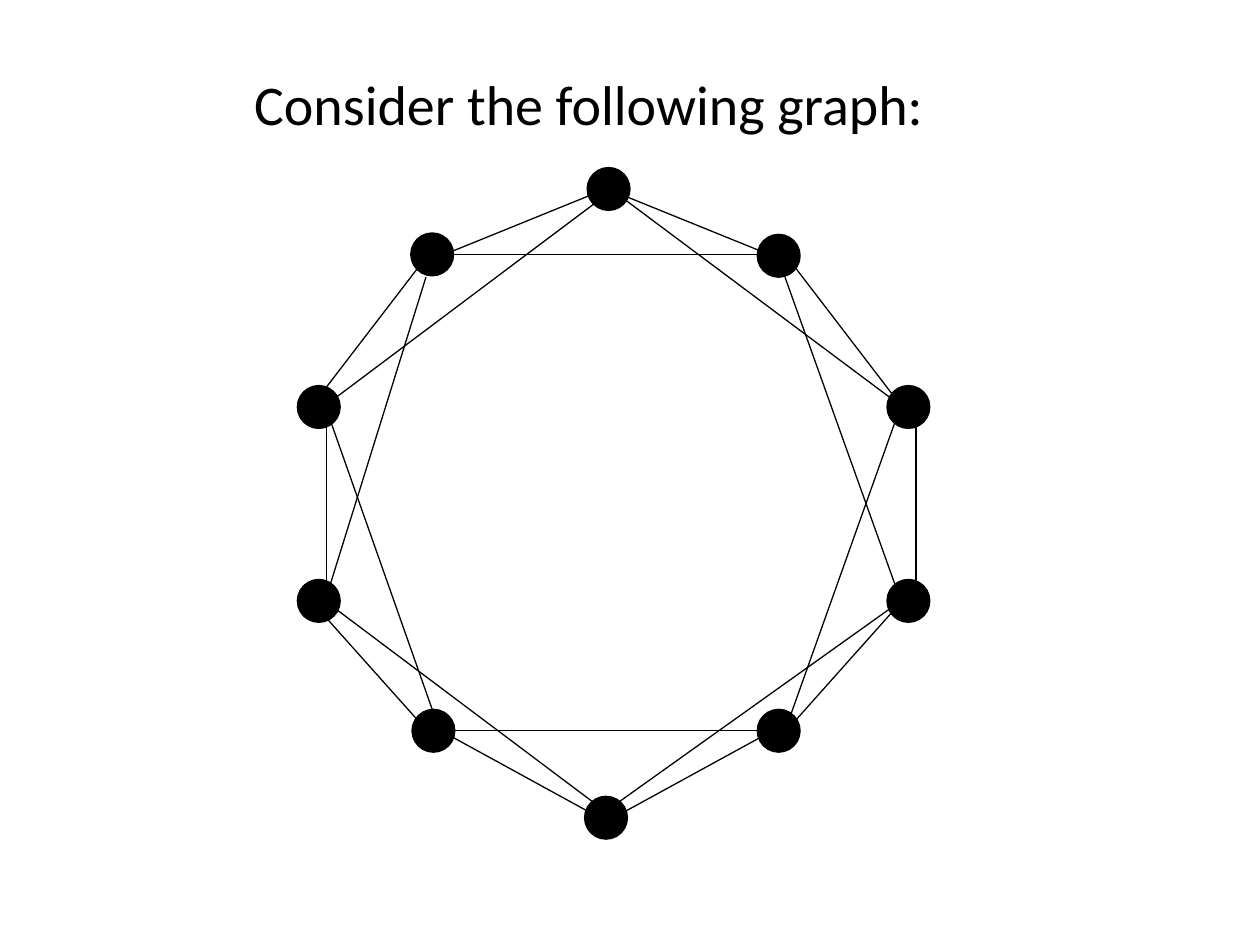
from dataclasses import dataclass

from lxml.etree import SubElement
from pptx import Presentation
from pptx.dml.color import RGBColor
from pptx.enum.shapes import MSO_CONNECTOR as Connector, MSO_SHAPE as Preset
from pptx.enum.text import MSO_ANCHOR as Anchor, MSO_AUTO_SIZE as AutoSize, PP_ALIGN as Align
from pptx.oxml.ns import qn
from pptx.util import Pt


@dataclass(frozen=True)
class Theme:
    ink: RGBColor = RGBColor(0, 0, 0)
    font: str = "Calibri"
    title_size: float = 32
    line_width: float = 0.75
    node_diameter: float = 24.5


@dataclass(frozen=True)
class Node:
    x: float
    y: float


@dataclass(frozen=True)
class Edge:
    x1: float
    y1: float
    x2: float
    y2: float


THEME = Theme()

NODES = [
    Node(347.8, 108),
    Node(445, 146.2),
    Node(519.1, 232.6),
    Node(519.1, 343.4),
    Node(445, 417.6),
    Node(346.3, 467.3),
    Node(247.7, 417.6),
    Node(182.2, 343.4),
    Node(182.2, 232.6),
    Node(247, 145.4),
]

RING = [
    Edge(350.6, 109.4, 441.4, 146.2),
    Edge(449.3, 146.2, 515.5, 232.6),
    Edge(523.4, 232.6, 523.4, 343.4),
    Edge(515.5, 343.4, 449.3, 417.6),
    Edge(441.4, 417.6, 350.6, 467.3),
    Edge(342.7, 467.3, 252, 417.6),
    Edge(244.1, 417.6, 177.8, 343.4),
    Edge(186.5, 343.4, 186.5, 232.6),
    Edge(177.8, 232.6, 244.1, 146.2),
    Edge(252, 146.2, 342.7, 109.4),
]

CHORDS = [
    Edge(349.9, 108.7, 514.8, 231.8),
    Edge(448.6, 158.4, 514.8, 343.4),
    Edge(514.8, 231.8, 448.6, 417.6),
    Edge(514.8, 343.4, 342, 466.6),
    Edge(440.6, 417.6, 251.3, 417.6),
    Edge(349.9, 466.6, 185.8, 343.4),
    Edge(251.3, 417.6, 185.8, 231.8),
    Edge(185.8, 343.4, 243.4, 158.4),
    Edge(185.8, 231.8, 349.9, 108.7),
    Edge(243.4, 145.4, 440.6, 145.4),
]


def write_text(shape, text: str, *, size: float, font: str, color: RGBColor, align: Align) -> None:
    frame = shape.text_frame
    frame.word_wrap = False
    frame.auto_size = AutoSize.SHAPE_TO_FIT_TEXT
    frame.vertical_anchor = Anchor.TOP
    paragraph = frame.paragraphs[0]
    paragraph.alignment = align
    run = paragraph.add_run()
    run.text = text
    run.font.size = Pt(size)
    run.font.name = font
    run.font.color.rgb = color


def draw_edge(slide, edge: Edge) -> None:
    connector = slide.shapes.add_connector(
        Connector.STRAIGHT, Pt(edge.x1), Pt(edge.y1), Pt(edge.x2), Pt(edge.y2)
    )
    connector.line.color.rgb = THEME.ink
    connector.line.width = Pt(THEME.line_width)
    SubElement(connector._element.spPr, qn("a:effectLst"))


def draw_node(slide, node: Node) -> None:
    diameter = THEME.node_diameter
    shape = slide.shapes.add_shape(
        Preset.OVAL,
        Pt(node.x - diameter / 2),
        Pt(node.y - diameter / 2),
        Pt(diameter),
        Pt(diameter),
    )
    shape.shadow.inherit = False
    shape.fill.solid()
    shape.fill.fore_color.rgb = THEME.ink
    shape.line.color.rgb = THEME.ink
    shape.line.width = Pt(THEME.line_width)


def main() -> None:
    presentation = Presentation()
    presentation.slide_width = Pt(720)
    presentation.slide_height = Pt(540)
    slide = presentation.slides.add_slide(presentation.slide_layouts.get_by_name("Title Only"))

    title = slide.shapes.title
    title.left, title.top, title.width, title.height = Pt(138), Pt(36), Pt(401), Pt(46)
    write_text(
        title,
        "Consider the following graph:",
        size=THEME.title_size,
        font=THEME.font,
        color=THEME.ink,
        align=Align.LEFT,
    )

    for edge in RING + CHORDS:
        draw_edge(slide, edge)
    for node in NODES:
        draw_node(slide, node)

    presentation.save("out.pptx")


if __name__ == "__main__":
    main()
